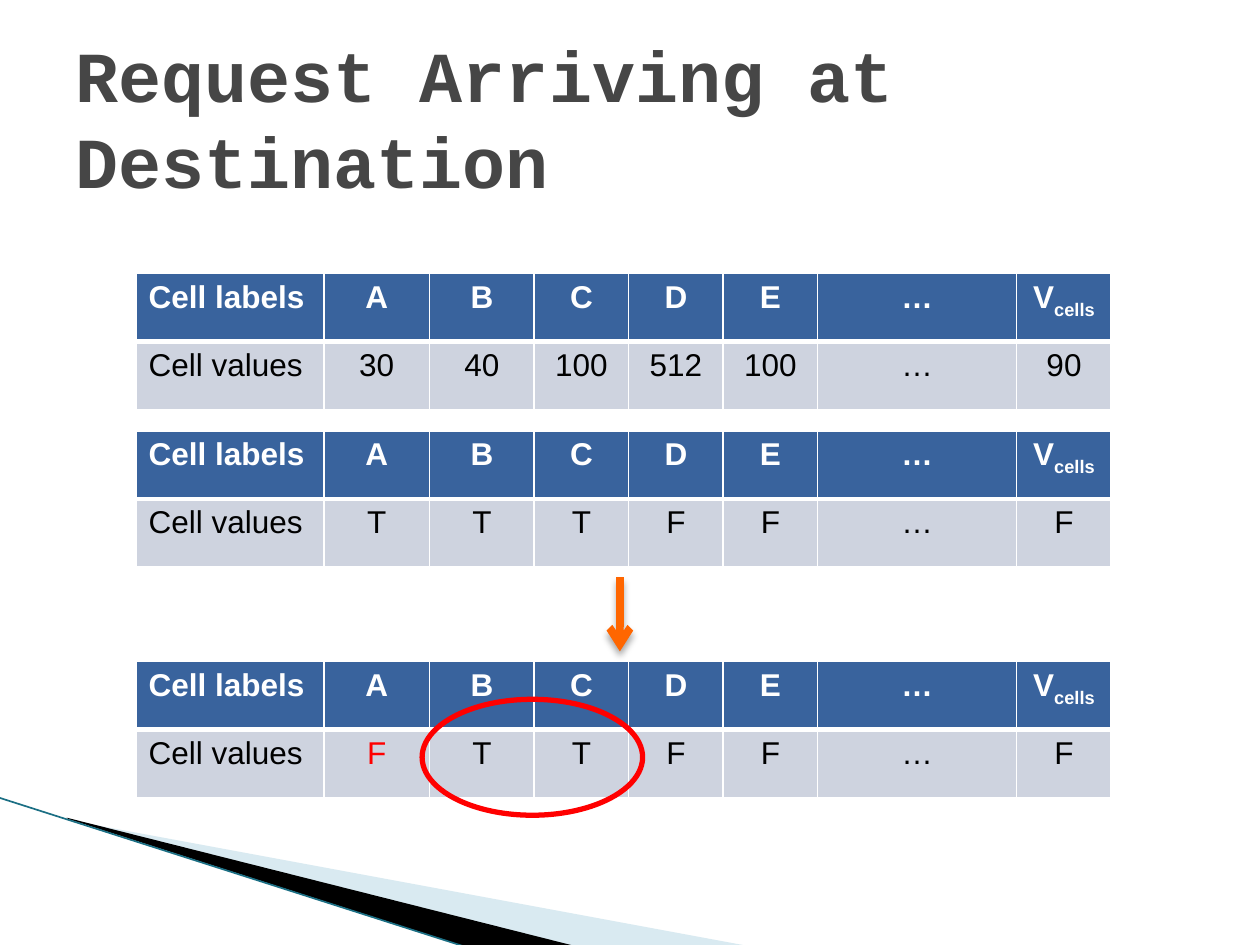
"""Build the slide on a request arriving at its destination."""
from lxml.etree import SubElement
from pptx import Presentation
from pptx.dml.color import RGBColor
from pptx.enum.dml import MSO_FILL
from pptx.enum.shapes import MSO_CONNECTOR, MSO_SHAPE
from pptx.enum.text import MSO_ANCHOR, MSO_AUTO_SIZE, PP_ALIGN
from pptx.oxml.ns import qn
from pptx.util import Inches, Pt

TITLE = "Request Arriving at Destination"
LABELS = ["Cell labels", "A", "B", "C", "D", "E", "…", ("V", "cells")]
TABLES = [
    {"top": 2.17, "values": ["30", "40", "100", "512", "100", "…", "90"], "changed": None},
    {"top": 3.42, "values": ["T", "T", "T", "F", "F", "…", "F"], "changed": None},
    {"top": 5.25, "values": ["F", "T", "T", "F", "F", "…", "F"], "changed": 1},
]
COLUMN_WIDTHS = [1.49, 0.84, 0.83, 0.75, 0.75, 0.75, 1.58, 0.75]
TABLE_LEFT, ROW_HEIGHT = 1.08, 0.54
WEDGES = [
    ("pale", 40, [(0.55, 6.51), (5.95, 7.51), (4.56, 7.51), (0.55, 6.5)]),
    ("black", 100, [(0.53, 6.49), (4.57, 7.51), (3.72, 7.52), (0.54, 6.5)]),
]
THEME = {
    "title_font": "Courier New", "body_font": "Arial",
    "title_size": 41, "body_size": 18,
    "title": "464646", "header": "39639D", "body": "CED3DF",
    "white": "FFFFFF", "black": "000000", "red": "FF0000",
    "orange": "FF6600", "pale": "A0CBDC", "teal": "1B6F84",
}


def color(name):
    return RGBColor.from_string(THEME[name])


def add_span(para, text, font, size, ink, bold):
    span = para.add_run()
    span.text = text
    span.font.name = THEME[font]
    span.font.size = Pt(THEME[size])
    span.font.color.rgb = color(ink)
    span.font.bold = bold
    return span


def add_solid(parent, name, alpha=100):
    fill = SubElement(parent, qn("a:solidFill"))
    tone = SubElement(fill, qn("a:srgbClr"), val=THEME[name])
    if alpha < 100:
        SubElement(tone, qn("a:alpha"), val=str(alpha * 1000))


def add_title(page):
    box = page.shapes.title
    box.left, box.top, box.width, box.height = map(Inches, (0.5, 0.3, 9, 1.25))
    frame = box.text_frame
    frame.word_wrap = True
    frame.auto_size = MSO_AUTO_SIZE.NONE
    frame.vertical_anchor = MSO_ANCHOR.MIDDLE
    para = frame.paragraphs[0]
    para.alignment = PP_ALIGN.LEFT
    add_span(para, TITLE, "title_font", "title_size", "title", True)


def add_wedge(page, tone, alpha, points):
    corners = [(Inches(x), Inches(y)) for x, y in points]
    builder = page.shapes.build_freeform(*corners[0])
    builder.add_line_segments(corners[1:], close=True)
    wedge = builder.convert_to_shape()
    wedge.shadow.inherit = False
    wedge.line.fill.background()
    wedge.fill.solid()
    wedge.fill.fore_color.rgb = color(tone)
    if alpha < 100:
        tint = wedge.fill._xPr.find(qn("a:solidFill"))[0]
        SubElement(tint, qn("a:alpha"), val=str(alpha * 1000))


def add_line(page, start, end, tone, width):
    ends = map(Inches, (*start, *end))
    line = page.shapes.add_connector(MSO_CONNECTOR.STRAIGHT, *ends)
    line.line.color.rgb = color(tone)
    line.line.width = Pt(width)
    effects = SubElement(line._element.spPr, qn("a:effectLst"))
    return line, effects


def add_arrow(page):
    arrow, effects = add_line(page, (4.92, 4.58), (4.92, 5.17), "orange", 4.33)
    SubElement(arrow.line._get_or_add_ln(), qn("a:tailEnd"), type="arrow")
    shadow = SubElement(effects, qn("a:outerShdw"), blurRad=str(Pt(4)),
                        dist=str(Pt(3)), dir=str(90 * 60000), rotWithShape="0")
    tone = SubElement(shadow, qn("a:srgbClr"), val=THEME["black"])
    SubElement(tone, qn("a:alpha"), val="35000")


def format_cell(cell, text, column, is_header, ink):
    properties = cell._tc.get_or_add_tcPr()
    thick_side = "B" if is_header else "T"
    for side in "LRTB":
        width = Pt(3 if side == thick_side else 1)
        add_solid(SubElement(properties, qn("a:ln" + side), w=str(width)), "white")
    cell.fill.solid()
    cell.fill.fore_color.rgb = color("header" if is_header else "body")
    para = cell.text_frame.paragraphs[0]
    para.alignment = PP_ALIGN.CENTER if column else PP_ALIGN.LEFT
    base, *subscripts = (text,) if isinstance(text, str) else text
    add_span(para, base, "body_font", "body_size", ink, is_header)
    for subscript in subscripts:
        span = add_span(para, subscript, "body_font", "body_size", ink, is_header)
        span.font._element.set("baseline", "-25000")


def add_cell_table(page, top, values, changed):
    rows = [LABELS, ["Cell values", *values]]
    place = map(Inches, (TABLE_LEFT, top, sum(COLUMN_WIDTHS), ROW_HEIGHT * len(rows)))
    table = page.shapes.add_table(len(rows), len(LABELS), *place).table
    table.horz_banding = False
    for column, width in zip(table.columns, COLUMN_WIDTHS):
        column.width = Inches(width)
    for r, texts in enumerate(rows):
        is_header = r == 0
        table.rows[r].height = Inches(ROW_HEIGHT)
        for c, text in enumerate(texts):
            ink = "white" if is_header else "red" if c == changed else "black"
            format_cell(table.cell(r, c), text, c, is_header, ink)


def add_ring(page):
    ring = page.shapes.add_shape(MSO_SHAPE.OVAL, *map(Inches, (3.35, 5.55, 1.75, 0.92)))
    ring.shadow.inherit = False
    ring.fill.background()
    ring.line.color.rgb = color("red")
    ring.line.width = Pt(3)


def main():
    deck = Presentation()
    deck.slide_width, deck.slide_height = Inches(10), Inches(7.5)
    page = deck.slides.add_slide(deck.slide_layouts[5])
    for wedge in WEDGES:
        add_wedge(page, *wedge)
    add_line(page, (-0.01, 6.33), (3.71, 7.52), "teal", 0.95)
    add_title(page)
    for table in TABLES:
        add_cell_table(page, **table)
    add_arrow(page)
    add_ring(page)
    deck.save("out.pptx")


if __name__ == "__main__":
    main()
